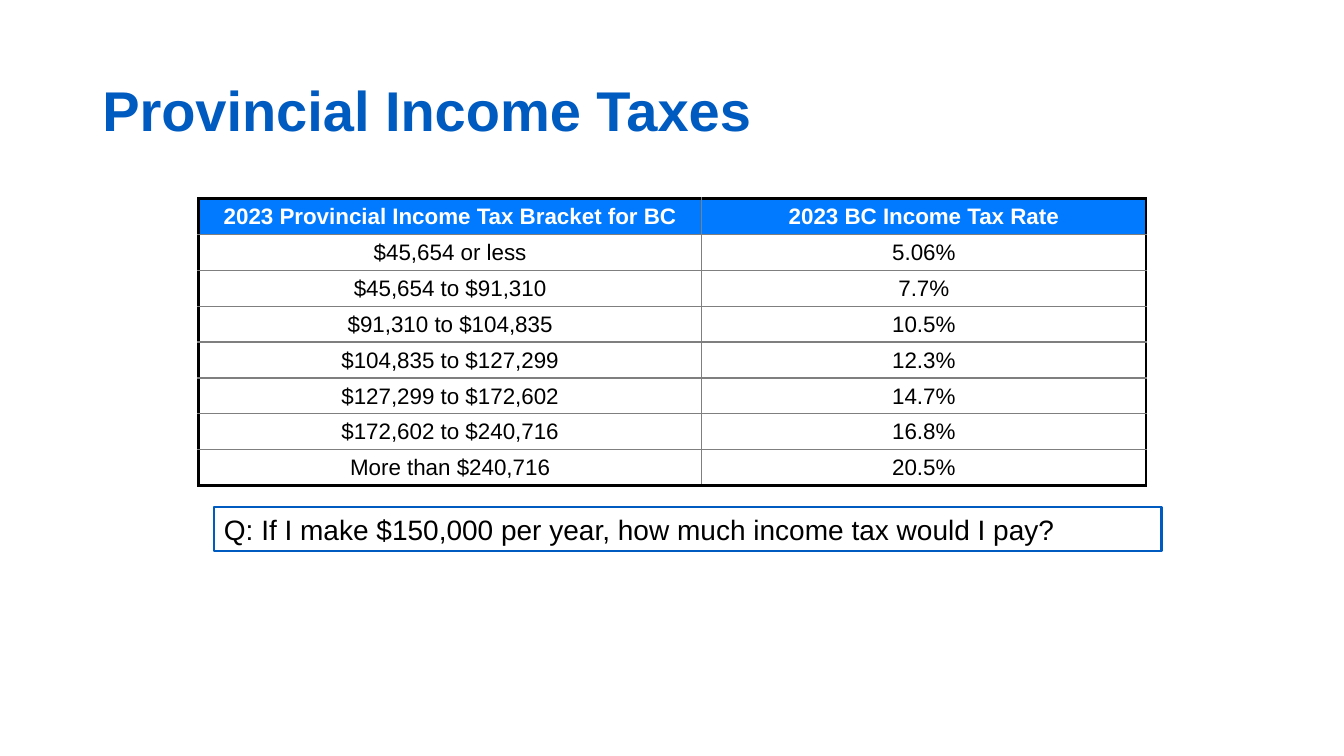
from dataclasses import dataclass

from lxml.etree import SubElement
from pptx import Presentation
from pptx.dml.color import RGBColor
from pptx.enum.shapes import MSO_SHAPE
from pptx.enum.text import MSO_ANCHOR, PP_ALIGN
from pptx.oxml.ns import qn
from pptx.table import _Cell
from pptx.text.text import TextFrame
from pptx.util import Pt

BLUE = RGBColor(0x00, 0x5B, 0xC0)
BRIGHT = RGBColor(0x01, 0x7A, 0xFF)
GREY = RGBColor(0x7F, 0x7F, 0x7F)
BLACK = RGBColor(0, 0, 0)
WHITE = RGBColor(255, 255, 255)


@dataclass
class Bracket:
    income: str
    rate: str


@dataclass
class Style:
    size: float
    color: RGBColor
    bold: bool = False
    align: PP_ALIGN = PP_ALIGN.LEFT


HEAD = Style(16, WHITE, True, PP_ALIGN.CENTER)
BODY = Style(16, BLACK, False, PP_ALIGN.CENTER)

BRACKETS = [
    Bracket("2023 Provincial Income Tax Bracket for BC", "2023 BC Income Tax Rate"),
    Bracket("$45,654 or less", "5.06%"),
    Bracket("$45,654 to $91,310", "7.7%"),
    Bracket("$91,310 to $104,835", "10.5%"),
    Bracket("$104,835 to $127,299", "12.3%"),
    Bracket("$127,299 to $172,602", "14.7%"),
    Bracket("$172,602 to $240,716", "16.8%"),
    Bracket("More than $240,716", "20.5%"),
]
WIDTHS = (359.3, 317.5)
ROW = 25.65


def write(frame: TextFrame, text: str, style: Style) -> None:
    frame.word_wrap = True
    line = frame.paragraphs[0]
    line.text = text
    line.alignment = style.align
    font = line.font
    font.name, font.size, font.bold = "Arial", Pt(style.size), style.bold
    font.color.rgb = style.color


def border(cell: _Cell, side: str, outer: bool) -> None:
    """Outer edges are thick and black, inner ones thin and grey."""
    width, color = (2.25, BLACK) if outer else (1, GREY)
    edge = SubElement(cell._tc.get_or_add_tcPr(), qn(f"a:ln{side}"), w=str(Pt(width)))
    fill = SubElement(edge, qn("a:solidFill"))
    SubElement(fill, qn("a:srgbClr"), val=str(color))


def main() -> None:
    deck = Presentation()
    deck.slide_width, deck.slide_height = Pt(960), Pt(540)
    slide = deck.slides.add_slide(deck.slide_layouts[6])
    shapes = slide.shapes

    # Title
    title = shapes.add_textbox(Pt(66), Pt(28.75), Pt(828), Pt(104.4)).text_frame
    write(title, "Provincial Income Taxes", Style(40, BLUE, True))
    title.vertical_anchor = MSO_ANCHOR.MIDDLE
    title.paragraphs[0].line_spacing = 0.9

    # Tax table
    count = len(BRACKETS)
    table = shapes.add_table(count, 2, Pt(141.84), Pt(141.84),
                             Pt(sum(WIDTHS)), Pt(ROW * count)).table
    table.horz_banding = False
    table.first_row = False
    for column, width in zip(table.columns, WIDTHS):
        column.width = Pt(width)
    for i, bracket in enumerate(BRACKETS):
        table.rows[i].height = Pt(ROW)
        for j, text in enumerate((bracket.income, bracket.rate)):
            cell = table.cell(i, j)
            write(cell.text_frame, text, BODY if i else HEAD)
            cell.vertical_anchor = MSO_ANCHOR.MIDDLE
            cell.margin_left = cell.margin_right = cell.margin_top = Pt(0.7)
            cell.margin_bottom = Pt(0)
            outer = {"L": j == 0, "R": j == 1, "T": i == 0, "B": i == count - 1}
            for side, edge in outer.items():
                border(cell, side, edge)
            if i:
                cell.fill.background()
            else:
                cell.fill.solid()
                cell.fill.fore_color.rgb = BRIGHT

    # Question
    box = shapes.add_shape(MSO_SHAPE.RECTANGLE, Pt(152.9), Pt(362.2), Pt(676.8), Pt(31.5))
    box.shadow.inherit = False
    box.fill.background()
    box.line.color.rgb = BLUE
    box.line.width = Pt(1.5)
    write(box.text_frame,
          "Q: If I make $150,000 per year, how much income tax would I pay?",
          Style(20, BLACK))
    box.text_frame.vertical_anchor = MSO_ANCHOR.TOP

    deck.save("out.pptx")


if __name__ == "__main__":
    main()
